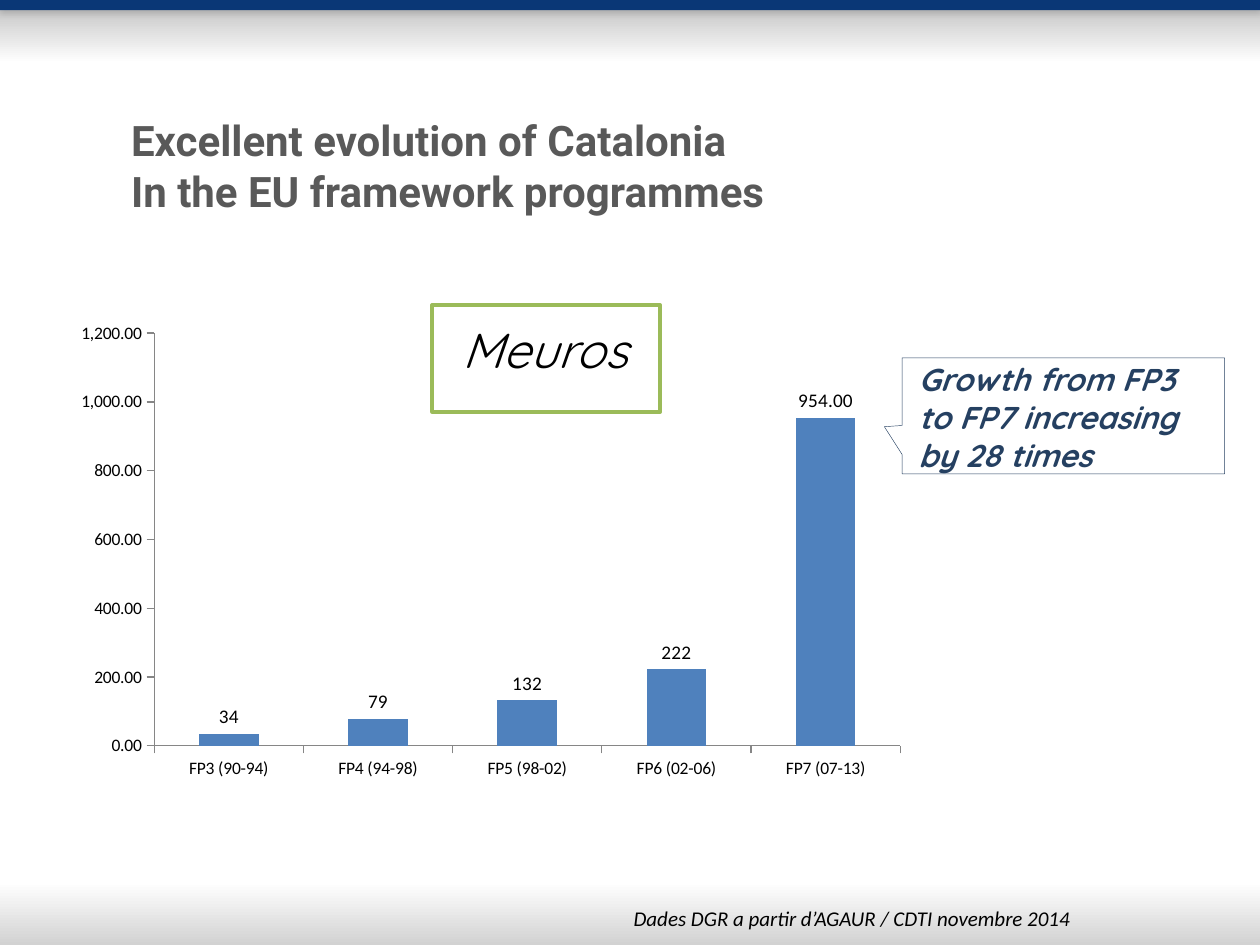
from lxml.etree import SubElement
from pptx import Presentation
from pptx.chart.data import CategoryChartData
from pptx.dml.color import RGBColor
from pptx.enum.chart import XL_CHART_TYPE, XL_LABEL_POSITION, XL_TICK_MARK
from pptx.enum.shapes import MSO_SHAPE
from pptx.enum.text import MSO_ANCHOR, MSO_AUTO_SIZE, PP_ALIGN
from pptx.oxml.ns import qn
from pptx.util import Inches, Pt

HEX = {"navy": "0A3776", "grey": "BFBFBF", "pale": "D2D2D2", "white": "FFFFFF",
       "shade": "808080", "title": "595959", "black": "000000", "green": "9BBB59",
       "ink": "254061", "bar": "4F81BD", "axis": "868686"}
RGB = {name: RGBColor.from_string(code) for name, code in HEX.items()}


def add_box(kind, box, fill=None, line=None, width=0):
    shape = slide.shapes.add_shape(kind, *map(Inches, box))
    shape.shadow.inherit = False
    if fill:
        shape.fill.solid()
        shape.fill.fore_color.rgb = RGB[fill]
    else:
        shape.fill.background()
    if line:
        shape.line.color.rgb = RGB[line]
        shape.line.width = Pt(width)
    else:
        shape.line.fill.background()
    return shape


def set_text(shape, text, color, wrap=True, **style):
    """Fill a shape with top-left text, one paragraph a line."""
    frame = shape.text_frame
    frame.text = text
    frame.word_wrap = wrap
    frame.auto_size = MSO_AUTO_SIZE.NONE
    frame.vertical_anchor = MSO_ANCHOR.TOP
    for para in frame.paragraphs:
        para.alignment = PP_ALIGN.LEFT
        font = para.runs[0].font
        font.color.rgb = RGB[color]
        for key, value in style.items():
            setattr(font, key, value)


deck = Presentation()
deck.slide_width, deck.slide_height = Inches(10), Inches(7.5)
slide = deck.slides.add_slide(deck.slide_layouts[5])

# Header and footer bands
for top, color, angle in ((7, "pale", 90), (0, "grey", 270)):
    band = add_box(MSO_SHAPE.RECTANGLE, (0, top, 10, 0.5))
    band.fill.gradient()
    band.fill.gradient_angle = angle
    for stop, name, place in zip(band.fill.gradient_stops, (color, "white"), (0, 1)):
        stop.color.rgb = RGB[name]
        stop.position = place

strip = add_box(MSO_SHAPE.RECTANGLE, (0, 0, 10, 0.08), "navy")
effects = strip.element.spPr.find(qn("a:effectLst"))
shadow = SubElement(effects, qn("a:outerShdw"), blurRad=str(Pt(3.1)),
                    dist=str(Pt(1.8)), dir="5400000", rotWithShape="0")
tint = SubElement(shadow, qn("a:srgbClr"), val=HEX["shade"])
SubElement(tint, qn("a:alpha"), val="35000")

# Title
title = slide.shapes.title
place = {"left": 0.94, "top": 0.86, "width": 9.06, "height": 1.99}
for key, value in place.items():
    setattr(title, key, Inches(value))
set_text(title, "Excellent evolution of Catalonia\nIn the EU framework programmes",
         "title", name="Roboto", size=Pt(24), bold=True)

# Frames, then the texts on them
add_box(MSO_SHAPE.RECTANGLE, (3.43, 2.42, 1.81, 0.85), "white", "green", 2)
callout = add_box(MSO_SHAPE.RECTANGULAR_CALLOUT, (7.16, 2.84, 2.56, 0.92),
                  line="ink", width=0.25)
callout.adjustments[0], callout.adjustments[1] = -0.555, 0.094

notes = [
    ((4.93, 7.14, 3.71, 0.3), "Dades DGR a partir d’AGAUR / CDTI novembre 2014", "black",
     {"wrap": False, "name": "Calibri", "size": Pt(12)}),
    ((7.19, 2.81, 2.5, 0.57), "Growth from FP3 to FP7 increasing by 28 times", "ink",
     {"name": "Quicksand", "size": Pt(18), "bold": True}),
    ((3.57, 2.49, 1.74, 0.57), "Meuros", "black",
     {"name": "Quicksand", "size": Pt(28)}),
]
for box, text, color, style in notes:
    note = slide.shapes.add_textbox(*map(Inches, box))
    set_text(note, text, color, italic=True, **style)

# Chart
data = CategoryChartData()
data.categories = ["FP3 (90-94)", "FP4 (94-98)", "FP5 (98-02)", "FP6 (02-06)", "FP7 (07-13)"]
data.add_series("Series 1", (34, 79, 132, 222, 954))
chart = slide.shapes.add_chart(XL_CHART_TYPE.COLUMN_CLUSTERED,
                               *map(Inches, (0.51, 2.49, 6.77, 3.76)), data).chart
chart.has_legend = chart.has_title = False

plot = chart.plots[0]
plot.gap_width = 150
plot.vary_by_categories = False
bars = plot.series[0].format.fill
bars.solid()
bars.fore_color.rgb = RGB["bar"]

labels = plot.series[0].data_labels
label_format = {"show_value": True, "position": XL_LABEL_POSITION.OUTSIDE_END,
                "number_format": "[<900]0;#,##0.00", "number_format_is_linked": False}
for key, value in label_format.items():
    setattr(labels, key, value)

for font, size in ((chart.font, 10), (labels.font, 11)):
    font.name, font.size = "Calibri", Pt(size)
    font.color.rgb = RGB["black"]

axis_format = {"has_major_gridlines": False, "major_tick_mark": XL_TICK_MARK.OUTSIDE,
               "minor_tick_mark": XL_TICK_MARK.NONE}
for axis, pattern in ((chart.category_axis, "General"), (chart.value_axis, "#,##0.00")):
    for key, value in axis_format.items():
        setattr(axis, key, value)
    axis.tick_labels.number_format = pattern
    axis.tick_labels.number_format_is_linked = False
    axis.format.line.color.rgb = RGB["axis"]
    axis.format.line.width = Pt(0.75)

deck.save("out.pptx")
